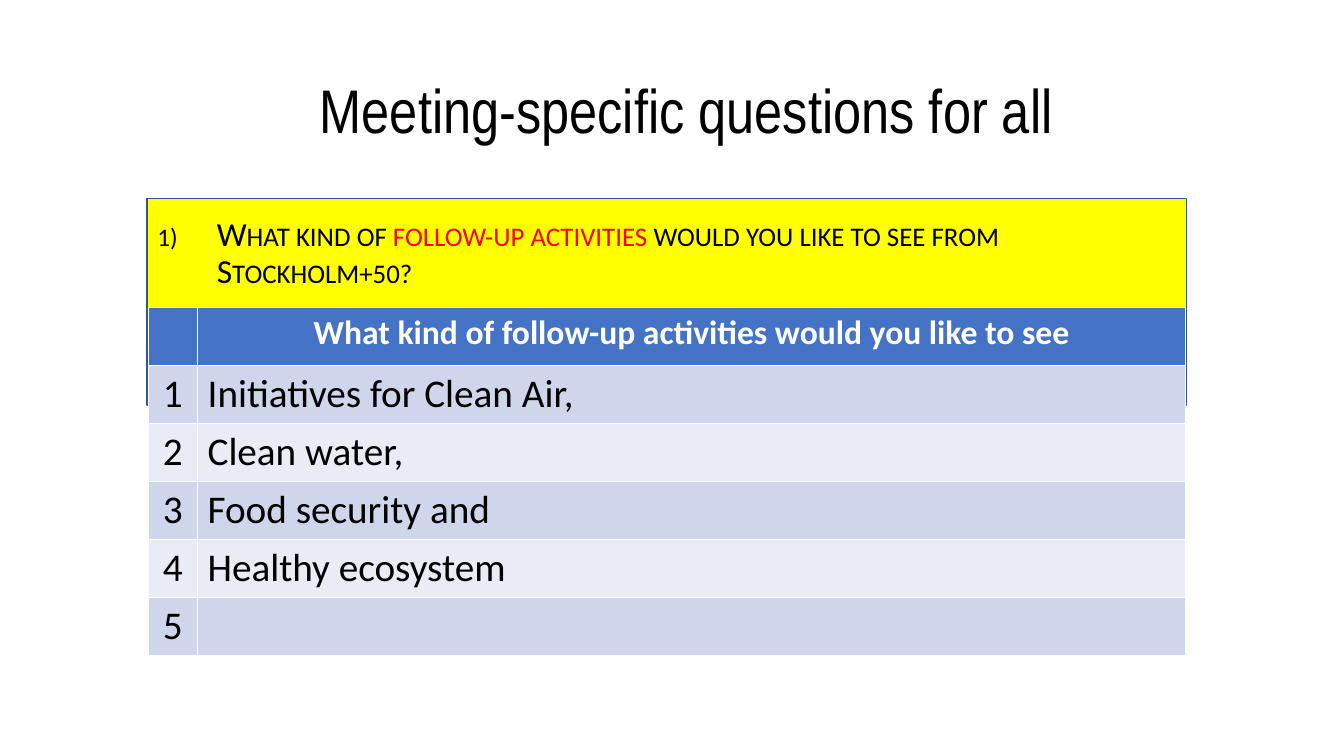
import pptx
import pptx.util
import pptx.dml.color
import pptx.enum.shapes
import pptx.enum.text
import lxml.etree

Inches = pptx.util.Inches
Pt = pptx.util.Pt
CENTER = pptx.enum.text.PP_ALIGN.CENTER
LEFT = pptx.enum.text.PP_ALIGN.LEFT
MIDDLE = pptx.enum.text.MSO_ANCHOR.MIDDLE
TOP = pptx.enum.text.MSO_ANCHOR.TOP


def color(value):
    return pptx.dml.color.RGBColor.from_string(value)


def style(para, name, size, value, bold=False, align=LEFT):
    para.alignment = align
    para.font.name = name
    para.font.size = Pt(size)
    para.font.bold = bold
    para.font.color.rgb = color(value)


deck = pptx.Presentation()
deck.slide_width = Inches(13.33)
deck.slide_height = Inches(7.5)
page = deck.slides.add_slide(deck.slide_layouts[1])

panel = page.shapes.add_shape(
    pptx.enum.shapes.MSO_SHAPE.RECTANGLE,
    Inches(1.46), Inches(1.97), Inches(10.31), Inches(2.05))
panel.shadow.inherit = False
panel.fill.solid()
panel.fill.fore_color.rgb = color("FFFF00")
panel.line.color.rgb = color("325491")
panel.line.width = Pt(1)
panel.element.getparent().insert(2, panel.element)

title = page.shapes.title
question = page.placeholders[1]
for box, left, top, width, height, anchor in [
    (title, 1.46, 0.4, 10.7, 1.45, MIDDLE),
    (question, 1.46, 2.11, 10.31, 4.32, TOP),
]:
    box.left, box.top = Inches(left), Inches(top)
    box.width, box.height = Inches(width), Inches(height)
    box.text_frame.word_wrap = True
    box.text_frame.auto_size = pptx.enum.text.MSO_AUTO_SIZE.NONE
    box.text_frame.vertical_anchor = anchor
    box.text_frame.paragraphs[0].line_spacing = 0.9
    box.text_frame.paragraphs[0].space_before = Pt(0)

title_para = title.text_frame.paragraphs[0]
title_para.text = "Meeting-specific questions for all"
style(title_para, "Arial Narrow", 44, "000000", align=CENTER)

question_para = question.text_frame.paragraphs[0]
properties = question_para._p.get_or_add_pPr()
properties.set("marL", str(Inches(0.59)))
properties.set("indent", str(Inches(-0.59)))
namespace = "{http://schemas.openxmlformats.org/drawingml/2006/main}"
for tag, key, value in [
    ("buSzPct", "val", "75000"),
    ("buFont", "typeface", "Calibri"),
    ("buAutoNum", "type", "arabicParenR"),
]:
    lxml.etree.SubElement(properties, namespace + tag).set(key, value)
style(question_para, "Calibri", 24, "000000")
for text, value in [
    ("What kind of ", "000000"),
    ("follow-up activities ", "FF0000"),
    ("would you like to see from Stockholm+50?", "000000"),
]:
    span = question_para.add_run()
    span.text = text
    span.font.color.rgb = color(value)
    span._r.get_or_add_rPr().set("cap", "small")

activities = [
    "Initiatives for Clean Air,",
    "Clean water,",
    "Food security and",
    "Healthy ecosystem",
    "",
]
rows = [("", "What kind of follow-up activities would you like to see")]
rows += [(str(number), text) for number, text in enumerate(activities, 1)]
table = page.shapes.add_table(
    len(rows), 2, Inches(1.47), Inches(3.05), Inches(10.29), Inches(3.45)).table
table.columns[0].width = Inches(0.49)
table.columns[1].width = Inches(9.8)

for row, texts in enumerate(rows):
    header = row == 0
    fill = "4472C4" if header else ("E9EBF5", "CFD5EA")[row % 2]
    for column, text in enumerate(texts):
        cell = table.cell(row, column)
        cell.fill.solid()
        cell.fill.fore_color.rgb = color(fill)
        para = cell.text_frame.paragraphs[0]
        para.text = text
        style(para, "Calibri", 24 if header else 28,
              "FFFFFF" if header else "000000", header,
              CENTER if header or column == 0 else LEFT)

deck.save("out.pptx")
